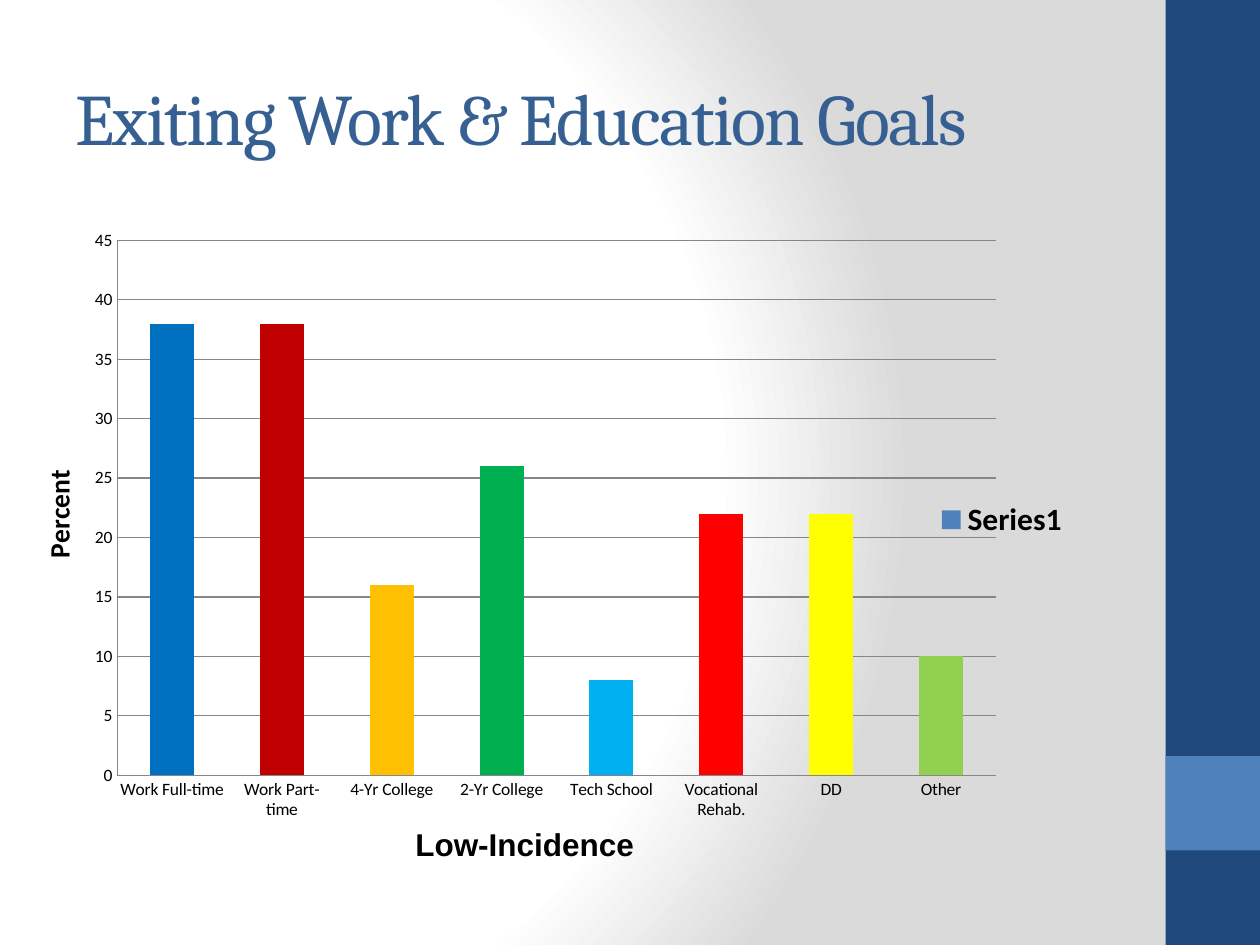
import pptx
import pptx.chart.data
import pptx.dml.color
import pptx.enum.chart
import pptx.enum.shapes
import pptx.enum.text
import pptx.oxml
import pptx.oxml.ns
import pptx.util
from dataclasses import dataclass

Inches = pptx.util.Inches
Pt = pptx.util.Pt
qn = pptx.oxml.ns.qn


@dataclass(frozen=True)
class Theme:
    navy: str = "1F497D"
    blue: str = "4F81BD"
    title: str = "376092"
    text: str = "000000"
    line: str = "868686"
    white: str = "FFFFFF"
    grey: str = "DADADA"
    title_size: float = 41.4
    heading_size: float = 18
    axis_title_size: float = 16
    label_size: float = 10


THEME = Theme()
GOALS = [
    ("Work Full-time", 38, "0070C0"),
    ("Work Part-time", 38, "C00000"),
    ("4-Yr College", 16, "FFC000"),
    ("2-Yr College", 26, "00B050"),
    ("Tech School", 8, "00B0F0"),
    ("Vocational Rehab.", 22, "FF0000"),
    ("DD", 22, "FFFF00"),
    ("Other", 10, "92D050"),
]


def color(value):
    return pptx.dml.color.RGBColor.from_string(value)


def apply_format(target, values):
    for name, value in values.items():
        setattr(target, name, value)


def set_font(font, name, size, text_color=THEME.text, bold=False):
    apply_format(font, {"name": name, "size": Pt(size), "bold": bold})
    font.color.rgb = color(text_color)


def fill_solid(fill, value):
    fill.solid()
    fill.fore_color.rgb = color(value)


def add_background(slide):
    """Radial gradient, white until three quarters of the way out."""
    fill = slide.background.fill
    fill.gradient()
    gradient = slide.background._cSld.find(".//" + qn("a:gradFill"))
    for child in list(gradient):
        gradient.remove(child)
    stops = pptx.oxml.parse_xml(f'<a:gsLst {pptx.oxml.ns.nsdecls("a")}/>')
    for position, value in ((0, THEME.white), (75, THEME.white), (100, THEME.grey)):
        stops.append(pptx.oxml.parse_xml(
            f'<a:gs {pptx.oxml.ns.nsdecls("a")} pos="{position * 1000}">'
            f'<a:srgbClr val="{value}"/></a:gs>'))
    gradient.append(stops)
    gradient.append(pptx.oxml.parse_xml(
        f'<a:path {pptx.oxml.ns.nsdecls("a")} path="circle">'
        '<a:fillToRect l="20000" t="50000" r="100000" b="50000"/></a:path>'))


def add_side_band(slide, left, top, width, height):
    """Dark band with a lighter square near its foot."""
    parts = ((top, height, THEME.navy), (top + height * 0.8, width, THEME.blue))
    for part_top, part_height, value in parts:
        shape = slide.shapes.add_shape(
            pptx.enum.shapes.MSO_SHAPE.RECTANGLE,
            Inches(left), Inches(part_top), Inches(width), Inches(part_height))
        shape.shadow.inherit = False
        fill_solid(shape.fill, value)
        shape.line.fill.background()


def add_text(slide, text, left, top, width, height, anchor, alignment):
    box = slide.shapes.add_textbox(
        Inches(left), Inches(top), Inches(width), Inches(height))
    apply_format(box.text_frame, {"word_wrap": True, "vertical_anchor": anchor})
    paragraph = box.text_frame.paragraphs[0]
    paragraph.alignment = alignment
    run = paragraph.add_run()
    run.text = text
    return run


def set_layout(element, **fractions):
    """Place a chart part by fractions of the chart's box."""
    for old in element.findall(qn("c:layout")):
        element.remove(old)
    target = '<c:layoutTarget val="inner"/>' if "w" in fractions and element.tag == qn("c:plotArea") else ""
    modes = "".join(f'<c:{key}Mode val="edge"/>' for key in ("x", "y"))
    values = "".join(f'<c:{key} val="{value}"/>' for key, value in fractions.items())
    layout = pptx.oxml.parse_xml(
        f'<c:layout {pptx.oxml.ns.nsdecls("c")}><c:manualLayout>'
        f'{target}{modes}{values}</c:manualLayout></c:layout>')
    before = {qn("c:plotArea"): None, qn("c:legend"): "c:legendPos", qn("c:title"): "c:tx"}
    previous = before[element.tag]
    if previous is None:
        element.insert(0, layout)
    else:
        element.find(qn(previous)).addnext(layout)


def add_goals_chart(slide, left, top, width, height):
    data = pptx.chart.data.CategoryChartData()
    data.categories = [name for name, _, _ in GOALS]
    data.add_series("Series1", [value for _, value, _ in GOALS])
    chart = slide.shapes.add_chart(
        pptx.enum.chart.XL_CHART_TYPE.COLUMN_CLUSTERED,
        Inches(left), Inches(top), Inches(width), Inches(height), data).chart
    chart.has_title = False
    set_font(chart.font, "Calibri", THEME.label_size)

    # Columns, one colour per goal
    plot = chart.plots[0]
    apply_format(plot, {"gap_width": 150, "vary_by_categories": False})
    series = plot.series[0]
    fill_solid(series.format.fill, THEME.blue)
    for index, (_, _, value) in enumerate(GOALS):
        fill_solid(series.points[index].format.fill, value)
    set_layout(chart._chartSpace.find(".//" + qn("c:plotArea")),
               x=0.1, y=0.04, w=0.75, h=0.9)

    # Axes
    no_tick = pptx.enum.chart.XL_TICK_MARK.NONE
    for axis in (chart.category_axis, chart.value_axis):
        apply_format(axis, {"major_tick_mark": no_tick, "minor_tick_mark": no_tick})
        axis.format.line.color.rgb = color(THEME.line)
        set_font(axis.tick_labels.font, "Calibri", THEME.label_size)
    labels = chart.category_axis._element.find(qn("c:txPr"))
    labels.find(qn("a:bodyPr")).set("rot", "0")
    axis = chart.value_axis
    apply_format(axis, {"minimum_scale": 0, "maximum_scale": 45, "major_unit": 5,
                        "has_major_gridlines": True})
    axis.major_gridlines.format.line.color.rgb = color(THEME.line)
    frame = axis.axis_title.text_frame
    frame.text = "Percent"
    set_font(frame.paragraphs[0].runs[0].font, "Calibri", THEME.axis_title_size, bold=True)
    body = frame._txBody.find(qn("a:bodyPr"))
    body.set("rot", "-5400000")
    body.set("vert", "horz")
    set_layout(axis.axis_title._element, x=0.03, y=0.42)

    # Legend over the right of the plot
    chart.has_legend = True
    apply_format(chart.legend, {
        "position": pptx.enum.chart.XL_LEGEND_POSITION.RIGHT, "include_in_layout": False})
    set_font(chart.legend.font, "Calibri", THEME.heading_size, bold=True)
    set_layout(chart.legend._element, x=0.79, y=0.47, w=0.13, h=0.08)


def main():
    presentation = pptx.Presentation()
    apply_format(presentation, {"slide_width": Inches(10), "slide_height": Inches(7.5)})
    slide = presentation.slides.add_slide(presentation.slide_layouts[6])
    add_background(slide)
    add_side_band(slide, 9.25, 0, 0.75, 7.5)

    # Title
    run = add_text(slide, "Exiting Work & Education Goals", 0.5, 0.3, 8.33, 1.25,
                   pptx.enum.text.MSO_ANCHOR.MIDDLE, pptx.enum.text.PP_ALIGN.LEFT)
    set_font(run.font, "Cambria", THEME.title_size, THEME.title)
    run.font._element.set("spc", "-100")

    add_goals_chart(slide, 0, 1.72, 9.3, 4.78)

    # Chart caption
    run = add_text(slide, "Low-Incidence", 3, 6.5, 2.33, 0.4,
                   pptx.enum.text.MSO_ANCHOR.TOP, pptx.enum.text.PP_ALIGN.CENTER)
    set_font(run.font, "Arial", THEME.heading_size, bold=True)
    presentation.save("out.pptx")


if __name__ == "__main__":
    main()
